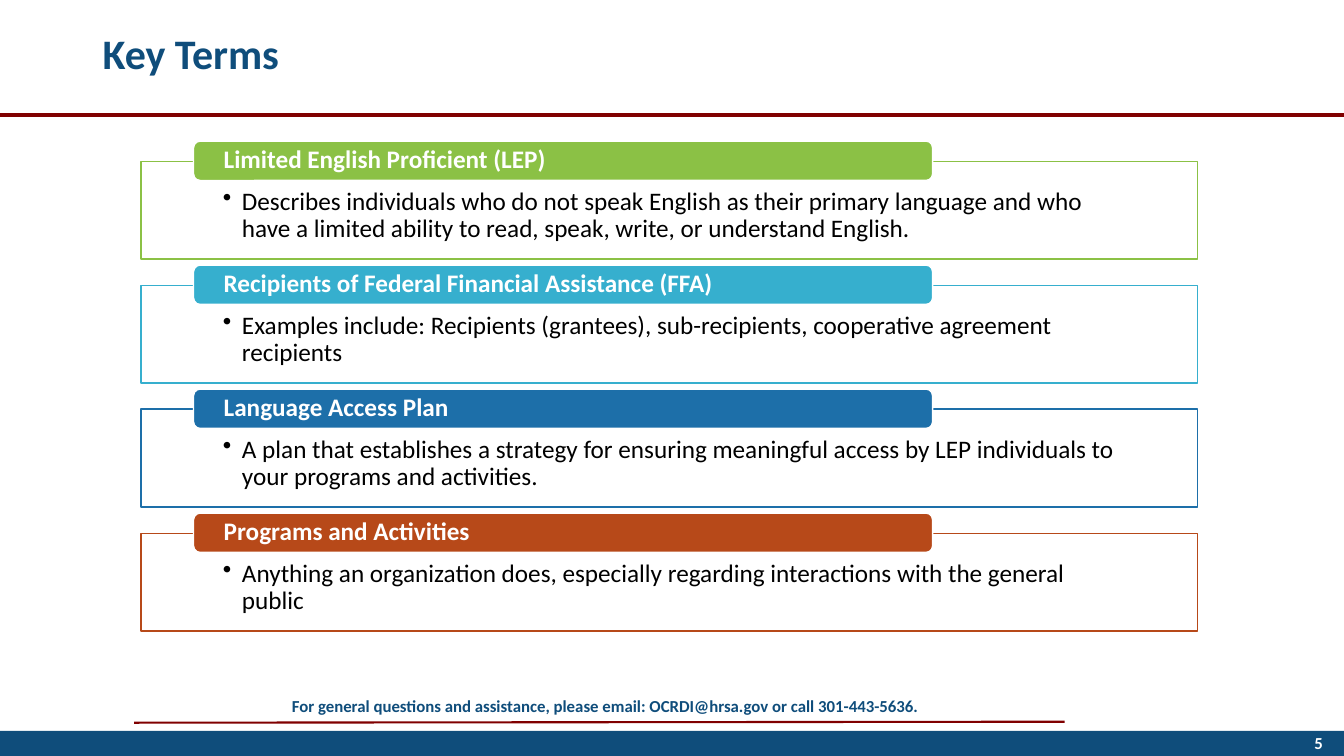
from lxml.etree import SubElement
from pptx import Presentation
from pptx.dml.color import RGBColor
from pptx.enum.shapes import MSO_CONNECTOR as Connector, MSO_SHAPE as Shape
from pptx.enum.text import MSO_ANCHOR as Anchor, PP_ALIGN as Align
from pptx.oxml.ns import qn
from pptx.util import Inches, Pt

COLORS = {
    "navy": "0F4D7B", "maroon": "800000", "white": "FFFFFF", "black": "000000",
    "green": "8BC145", "cyan": "36AFCE", "blue": "1D6FA9", "rust": "B74919",
}
TERMS = [
    ("green", "Limited English Proficient (LEP)",
     "Describes individuals who do not speak English as their primary language and who "
     "have a limited ability to read, speak, write, or understand English."),
    ("cyan", "Recipients of Federal Financial Assistance (FFA)",
     "Examples include: Recipients (grantees), sub-recipients, cooperative agreement recipients"),
    ("blue", "Language Access Plan",
     "A plan that establishes a strategy for ensuring meaningful access by LEP individuals to "
     "your programs and activities."),
    ("rust", "Programs and Activities",
     "Anything an organization does, especially regarding interactions with the general public"),
]
TERM_PITCH = 1.23

deck = Presentation()
deck.slide_width, deck.slide_height = Inches(13.33), Inches(7.5)
page = deck.slides.add_slide(deck.slide_layouts[6])


def write(text, *place, shape=None, fill=None, line=None, size=18, color="black", bold=False,
          align=Align.LEFT, anchor=Anchor.MIDDLE, spacing=1.0, margins=(0.1, 0.05, 0.1, 0.05),
          bullet=False):
    """Add a text box, or a preset shape with text, at left, top, width, height in inches."""
    place = [Inches(length) for length in place]
    if shape is None:
        box = page.shapes.add_textbox(*place)
    else:
        box = page.shapes.add_shape(shape, *place)
        box.shadow.inherit = False
        box.fill.solid()
        box.fill.fore_color.rgb = RGBColor.from_string(COLORS[fill])
        box.line.color.rgb = RGBColor.from_string(COLORS[line])
        box.line.width = Pt(1)
    frame = box.text_frame
    frame.word_wrap = True
    frame.vertical_anchor = anchor
    frame.margin_left, frame.margin_top, frame.margin_right, frame.margin_bottom = map(Inches, margins)
    para = frame.paragraphs[0]
    para.alignment = align
    para.line_spacing = spacing
    if bullet:
        properties = para._p.get_or_add_pPr()
        properties.set("marL", str(Inches(0.19)))
        properties.set("indent", str(-Inches(0.19)))
        SubElement(properties, qn("a:buChar")).set("char", "•")
    span = para.add_run()
    span.text = text
    span.font.name = "Calibri"
    span.font.size = Pt(size)
    span.font.bold = bold
    span.font.color.rgb = RGBColor.from_string(COLORS[color])
    return box


# Header and footer
for x1, y1, x2, y2, width in [(1.33, 7.17, 10.56, 7.16, 1.5), (0, 1.14, 13.33, 1.14, 3)]:
    rule = page.shapes.add_connector(Connector.STRAIGHT, Inches(x1), Inches(y1), Inches(x2), Inches(y2))
    rule.line.color.rgb = RGBColor.from_string(COLORS["maroon"])
    rule.line.width = Pt(width)
    SubElement(rule._element.spPr, qn("a:effectLst"))

footer_bar = page.shapes.add_shape(Shape.RECTANGLE, 0, Inches(7.25), deck.slide_width, Inches(0.25))
footer_bar.shadow.inherit = False
footer_bar.fill.solid()
footer_bar.fill.fore_color.rgb = RGBColor.from_string(COLORS["navy"])
footer_bar.line.fill.background()

write("For general questions and assistance, please email: OCRDI@hrsa.gov or call 301-443-5636.",
      1.67, 6.85, 8.67, 0.3, size=12, color="navy", bold=True, align=Align.CENTER, anchor=Anchor.TOP)
write("Key Terms", 0.92, -0.17, 11.5, 1.45, size=30, color="navy", bold=True, spacing=0.9)

# Each term: an outlined definition with a coloured tab on its top edge
for index, (accent, term, definition) in enumerate(TERMS):
    offset = index * TERM_PITCH
    write(definition, 1.4, 1.6 + offset, 10.48, 0.97, shape=Shape.RECTANGLE, fill="white", line=accent,
          anchor=Anchor.TOP, spacing=0.9, margins=(0.81, 0.27, 0.81, 0.14), bullet=True)
    write(term, 1.92, 1.4 + offset, 7.33, 0.39, shape=Shape.ROUNDED_RECTANGLE, fill=accent, line="white",
          color="white", bold=True, spacing=0.9, margins=(0.28, 0, 0.28, 0))

write("5", 10.22, 7.17, 3, 0.4, size=12, color="white", bold=True, align=Align.RIGHT)

deck.save("out.pptx")
